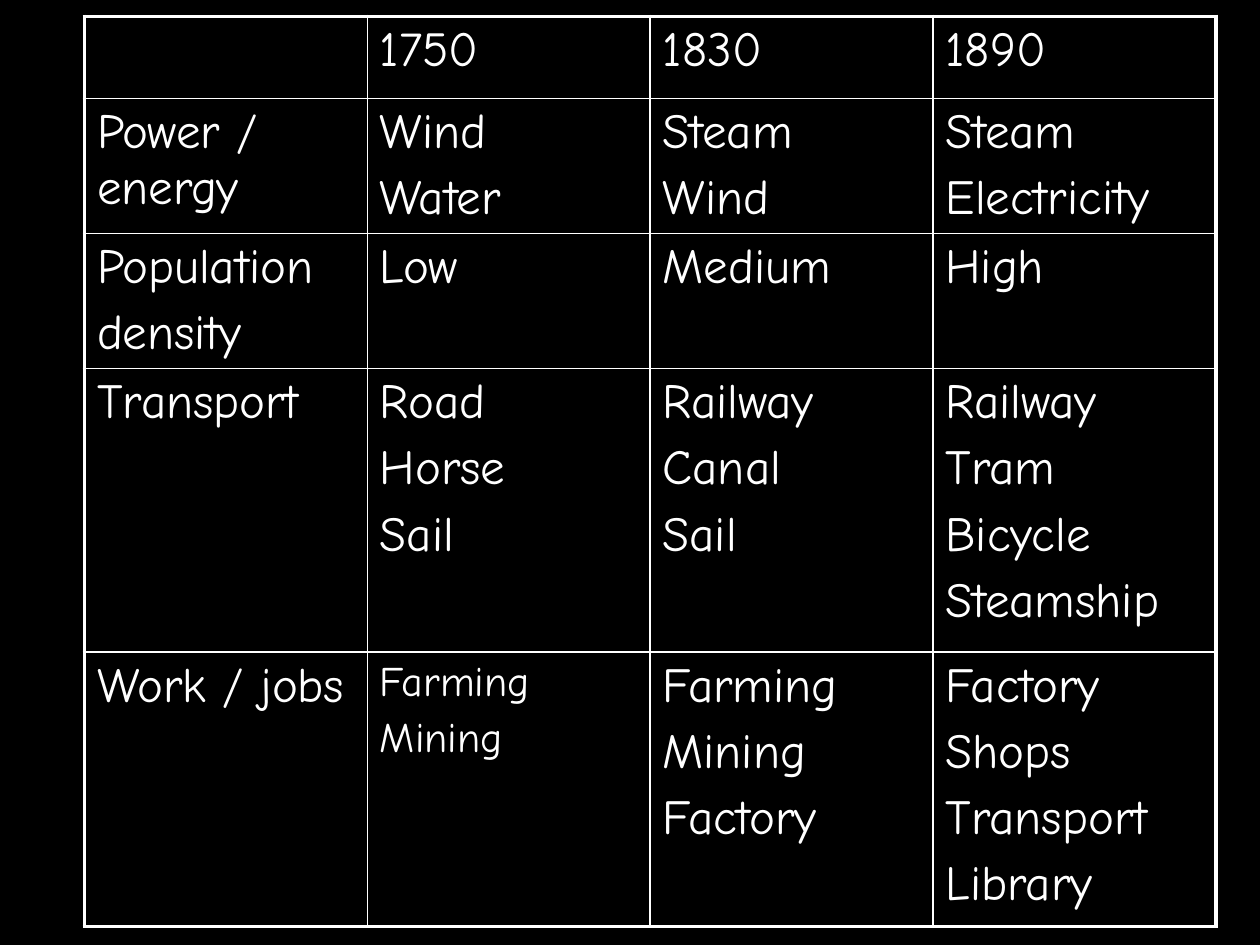
from lxml.etree import SubElement
from pptx import Presentation
from pptx.dml.color import RGBColor
from pptx.oxml.ns import qn
from pptx.util import Inches, Pt

FONT = "Comic Neue"
INK, GROUND = "FFFFFF", "000000"
BODY_SIZE, SMALL_SIZE = 28, 24
SMALL_CELLS = {(4, 1)}
INNER_LINE, OUTER_LINE = 1, 2.25
LEFT, TOP, COLUMN_WIDTH = 0.67, 0.13, 2.245
ROW_HEIGHTS = [0.65, 1.07, 1.07, 2.25, 2.18]
ROWS = [
    ["", "1750", "1830", "1890"],
    ["Power / energy", "Wind\nWater", "Steam\nWind", "Steam\nElectricity"],
    ["Population\ndensity", "Low", "Medium", "High"],
    ["Transport", "Road\nHorse\nSail", "Railway\nCanal\nSail",
     "Railway\nTram\nBicycle\nSteamship"],
    ["Work / jobs", "Farming\nMining", "Farming\nMining\nFactory",
     "Factory\nShops\nTransport\nLibrary"],
]


def color(value):
    return RGBColor.from_string(value)


def set_borders(cell, outer_sides):
    properties = cell._tc.get_or_add_tcPr()
    for side, outer in zip("LRTB", outer_sides):
        width = Pt(OUTER_LINE if outer else INNER_LINE)
        line = SubElement(properties, qn(f"a:ln{side}"), w=str(width))
        fill = SubElement(line, qn("a:solidFill"))
        SubElement(fill, qn("a:srgbClr"), val=INK)
    SubElement(properties, qn("a:noFill"))


def write_text(cell, text, size):
    cell.text_frame.text = text
    for para in cell.text_frame.paragraphs:
        para.space_before = Pt(size * 0.2)
        for span in para.runs:
            span.font.name = FONT
            span.font.size = Pt(size)
            span.font.color.rgb = color(INK)


def main():
    deck = Presentation()
    deck.slide_width, deck.slide_height = Inches(10), Inches(7.5)
    page = deck.slides.add_slide(deck.slide_layouts[6])
    page.background.fill.solid()
    page.background.fill.fore_color.rgb = color(GROUND)

    row_count, column_count = len(ROWS), len(ROWS[0])
    table = page.shapes.add_table(
        row_count, column_count, Inches(LEFT), Inches(TOP),
        Inches(COLUMN_WIDTH * column_count), Inches(sum(ROW_HEIGHTS))).table
    table.first_row = table.horz_banding = False
    for row, height in zip(table.rows, ROW_HEIGHTS):
        row.height = Inches(height)

    for r, texts in enumerate(ROWS):
        for c, text in enumerate(texts):
            cell = table.cell(r, c)
            write_text(cell, text, SMALL_SIZE if (r, c) in SMALL_CELLS else BODY_SIZE)
            set_borders(cell, (c == 0, c == column_count - 1,
                               r == 0, r == row_count - 1))

    deck.save("out.pptx")


if __name__ == "__main__":
    main()
